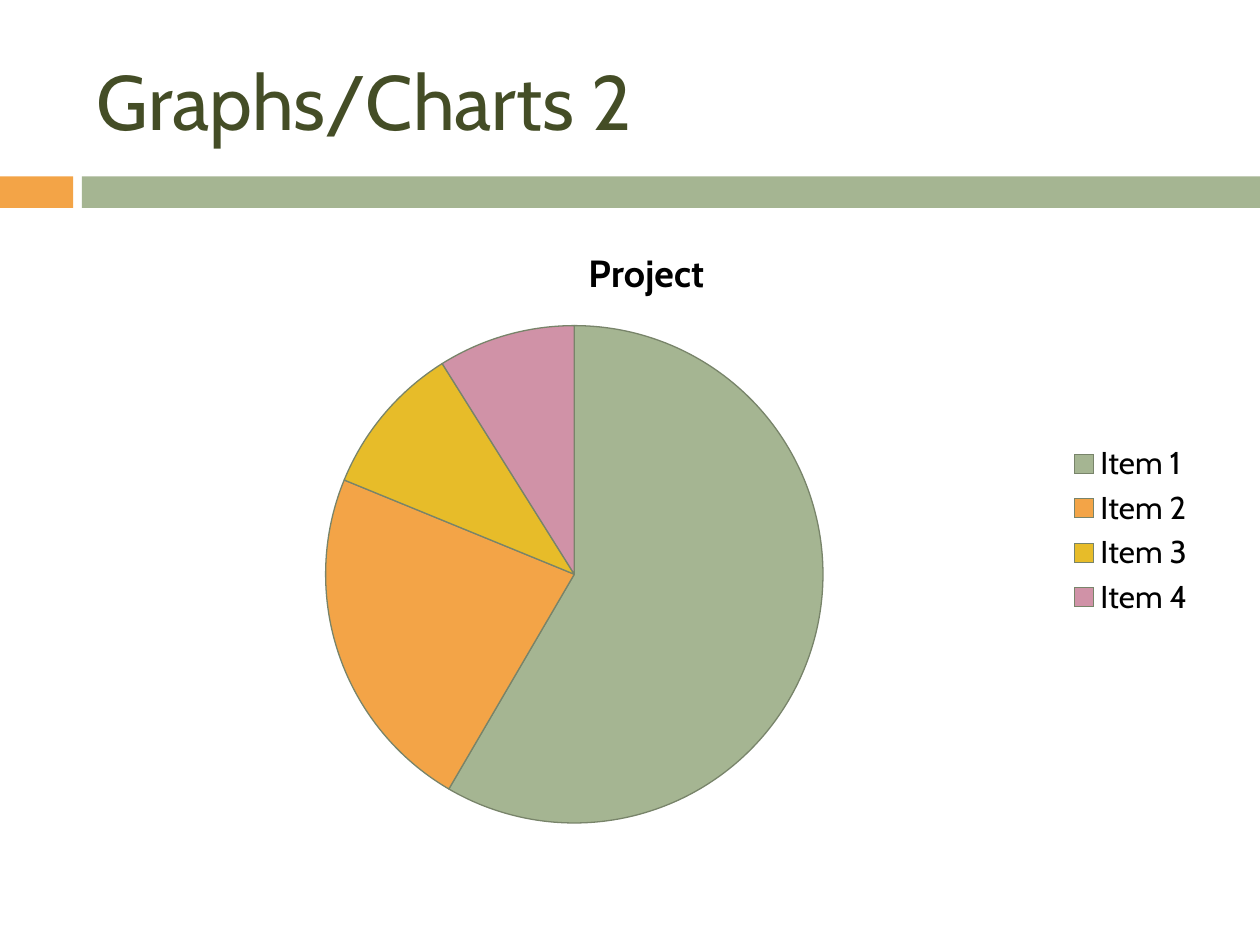
from dataclasses import dataclass

from pptx import Presentation
from pptx.chart.data import CategoryChartData
from pptx.dml.color import RGBColor
from pptx.enum.chart import XL_CHART_TYPE, XL_LEGEND_POSITION
from pptx.enum.shapes import MSO_SHAPE
from pptx.enum.text import MSO_ANCHOR
from pptx.util import Inches, Pt

PIE = XL_CHART_TYPE.PIE
LEGEND_RIGHT = XL_LEGEND_POSITION.RIGHT
RECTANGLE = MSO_SHAPE.RECTANGLE
MIDDLE = MSO_ANCHOR.MIDDLE
BLANK_LAYOUT = 6


@dataclass(frozen=True)
class Theme:
    font: str = "Cabin"
    heading: str = "444D26"
    ink: str = "000000"
    green: str = "A5B592"
    orange: str = "F3A447"
    yellow: str = "E7BC29"
    pink: str = "D092A7"
    outline: str = "78846A"
    heading_size: float = 44
    chart_title_size: float = 21.6
    chart_size: float = 18
    outline_width: float = 0.75


THEME = Theme()
PROJECT_SHARES = {
    "Item 1": (59, THEME.green),
    "Item 2": (23, THEME.orange),
    "Item 3": (10, THEME.yellow),
    "Item 4": (9, THEME.pink),
}


def apply_format(target, values):
    for attribute, value in values.items():
        setattr(target, attribute, value)


def style_font(font, size, color, bold=False):
    apply_format(font, {"name": THEME.font, "size": Pt(size), "bold": bold})
    font.color.rgb = RGBColor.from_string(color)


def paint(fill, color):
    fill.solid()
    fill.fore_color.rgb = RGBColor.from_string(color)


def add_band(slide, left, width, color):
    band = slide.shapes.add_shape(
        RECTANGLE, Inches(left), Inches(1.4), Inches(width), Inches(0.25)
    )
    band.shadow.inherit = False
    paint(band.fill, color)
    band.line.fill.background()


def add_heading(slide, wording):
    heading = slide.shapes.add_textbox(
        Inches(0.67), Inches(0.25), Inches(8.92), Inches(1.08)
    )
    frame = heading.text_frame
    apply_format(frame, {"word_wrap": True, "vertical_anchor": MIDDLE})
    run = frame.paragraphs[0].add_run()
    run.text = wording
    style_font(run.font, THEME.heading_size, THEME.heading)


def add_share_pie(slide, name, shares):
    chart_data = CategoryChartData()
    chart_data.categories = list(shares)
    chart_data.add_series(name, [value for value, _ in shares.values()])
    chart = slide.shapes.add_chart(
        PIE, Inches(0.67), Inches(1.75), Inches(8.92), Inches(4.92), chart_data
    ).chart
    style_font(chart.font, THEME.chart_size, THEME.ink)

    apply_format(chart, {"has_title": True, "has_legend": True})
    title_run = chart.chart_title.text_frame.paragraphs[0].add_run()
    title_run.text = name
    style_font(title_run.font, THEME.chart_title_size, THEME.ink, bold=True)
    chart.chart_title.include_in_layout = False
    apply_format(
        chart.legend, {"position": LEGEND_RIGHT, "include_in_layout": False}
    )

    plot = chart.plots[0]
    plot.vary_by_categories = True
    for index, (_, color) in enumerate(shares.values()):
        slice_format = plot.series[0].points[index].format
        paint(slice_format.fill, color)
        paint(slice_format.line.fill, THEME.outline)
        slice_format.line.width = Pt(THEME.outline_width)


def main():
    deck = Presentation()
    apply_format(deck, {"slide_width": Inches(10), "slide_height": Inches(7.5)})
    slide = deck.slides.add_slide(deck.slide_layouts[BLANK_LAYOUT])
    add_band(slide, 0, 0.58, THEME.orange)
    add_band(slide, 0.65, 9.35, THEME.green)
    add_heading(slide, "Graphs/Charts 2")
    add_share_pie(slide, "Project", PROJECT_SHARES)
    deck.save("out.pptx")


if __name__ == "__main__":
    main()
